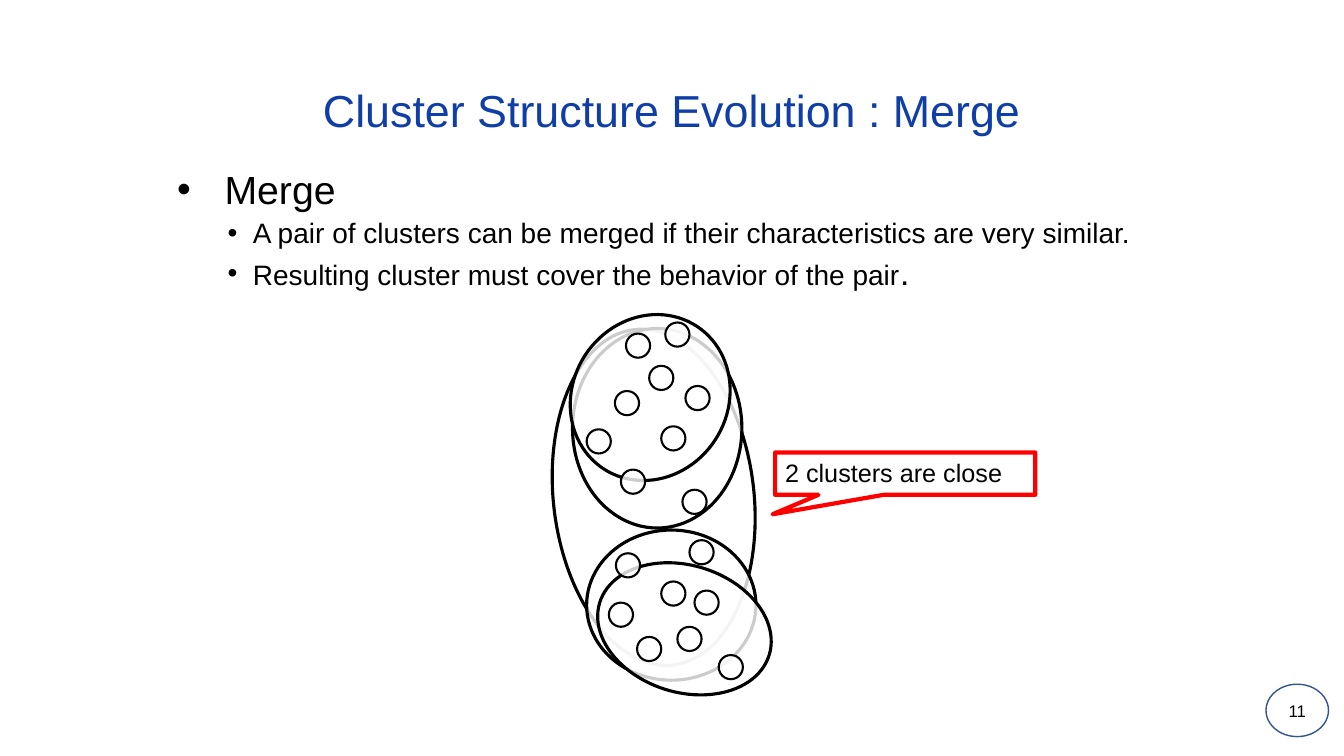
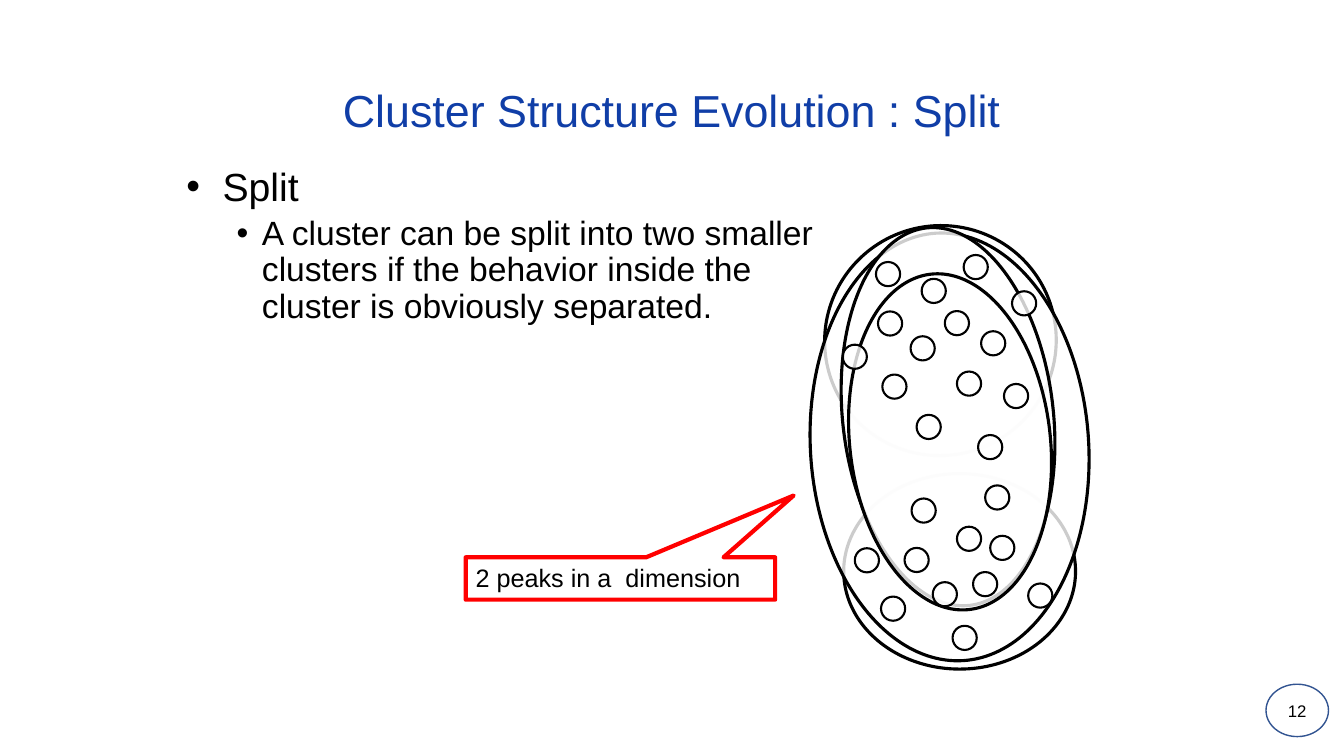
from dataclasses import dataclass
from typing import NamedTuple

from lxml.etree import SubElement
from pptx import Presentation
from pptx.dml.color import RGBColor
from pptx.enum.shapes import MSO_SHAPE as Preset
from pptx.enum.text import MSO_ANCHOR as Anchor, PP_ALIGN as Align
from pptx.oxml.ns import qn
from pptx.util import Inches, Pt

COLORS = {
    "title": "103EA7",
    "text": "000000",
    "paper": "FFFFFF",
    "outline": "000000",
    "callout": "FF0000",
    "badge": "325491",
}
FONT = "Arial"
SLIDE_WIDTH, SLIDE_HEIGHT = 13.33, 7.5
COLUMNS = 40
CELL = Inches(SLIDE_WIDTH) / COLUMNS
OPACITY = 80
POINT_SIZE = 0.72


class Box(NamedTuple):
    column: float
    row: float
    width: float
    height: float


class Run(NamedTuple):
    text: str
    size: float


class Cluster(NamedTuple):
    box: Box
    rotation: float = 0


class Callout(NamedTuple):
    text: str
    box: Box
    tip: tuple[float, float]


@dataclass
class Bullet:
    runs: list[Run]
    margin: float = 0.75
    hanging: float = 0.25
    space_before: float = 5


@dataclass
class EvolutionSlide:
    number: int
    name: str
    body: Box
    bullets: list[Bullet]
    clusters: list[Cluster]
    points: list[tuple[float, float]]
    callout: Callout


TITLE_BOX = Box(2.75, 1.2, 34.5, 4.35)
BADGE_BOX = Box(37.68, 20.37, 1.86, 1.56)
SPLIT_SHIFT = (8.8, -1.63)
SHARED_POINTS = [
    (18.12, 17.94), (19.68, 17.31), (19.32, 10.89), (20.16, 18.66),
    (18.63, 9.93), (18.3, 11.64), (18.96, 18.96), (17.46, 12.78),
    (20.67, 17.58), (20.4, 11.49), (19.68, 12.69), (18.48, 13.98),
    (20.31, 14.58), (18.33, 16.47), (20.52, 16.08),
]
SHIFTED_POINTS = [
    (column + SPLIT_SHIFT[0], row + SPLIT_SHIFT[1]) for column, row in SHARED_POINTS
]

SLIDES = [
    EvolutionSlide(
        number=11,
        name="Merge",
        body=Box(4.98, 4.92, 29.4, 4.53),
        bullets=[
            Bullet([Run("Merge", 28)], margin=0.47, hanging=0.47, space_before=0),
            Bullet([Run("A pair of clusters can be merged if their "
                        "characteristics are very similar.", 20)]),
            Bullet([Run("Resulting cluster must cover the behavior of the pair", 20),
                    Run(".", 24)]),
        ],
        clusters=[
            Cluster(Box(16.47, 9.78, 5.97, 10.05), 353.4),
            Cluster(Box(17.46, 15.78, 5.04, 4.47)),
            Cluster(Box(17.04, 9.78, 5.04, 5.94)),
            Cluster(Box(17.04, 9.3, 4.62, 5.07), 33.1),
            Cluster(Box(17.73, 16.83, 5.28, 3.78), 17.2),
        ],
        points=SHARED_POINTS + [(21.39, 19.5), (19.8, 9.6)],
        callout=Callout("2 clusters are close", Box(23.07, 13.47, 7.74, 1.26),
                        (-0.51, 0.96)),
    ),
    EvolutionSlide(
        number=12,
        name="Split",
        body=Box(5.25, 4.83, 19.83, 14.76),
        bullets=[
            Bullet([Run("Split", 28)], margin=0.36, hanging=0.36, space_before=0),
            Bullet([Run("A cluster can be split into two smaller clusters if the "
                        "behavior inside the cluster is obviously separated.", 24)]),
        ],
        clusters=[
            Cluster(Box(25.11, 14.1, 6.9, 5.82)),
            Cluster(Box(24.54, 6.72, 6.9, 6.84), 339.1),
            Cluster(Box(24.12, 6.93, 8.28, 12.75), 356.3),
            Cluster(Box(25.08, 6.75, 6.27, 11.31), 353.4),
            Cluster(Box(25.29, 8.13, 5.97, 10.05), 353.4),
        ],
        points=SHIFTED_POINTS + [
            (29.88, 11.43), (26.13, 9.27), (28.68, 7.59), (26.07, 7.8),
            (25.44, 16.32), (30.6, 17.37), (26.22, 17.76), (28.35, 18.63),
            (25.08, 10.26), (30.12, 8.67),
        ],
        callout=Callout("2 peaks in a  dimension", Box(13.86, 16.59, 9.21, 1.26),
                        (0.56, -1.96)),
    ),
]


def color(name: str) -> RGBColor:
    return RGBColor.from_string(COLORS[name])


def place(box: Box) -> list[int]:
    return [round(length * CELL) for length in box]


def write(paragraph, text: str, *, size: float, tint: str = "text",
          align: Align = Align.LEFT, spacing: float = 1.0) -> None:
    paragraph.alignment = align
    paragraph.line_spacing = spacing
    run = paragraph.add_run()
    run.text = text
    run.font.name = FONT
    run.font.size = Pt(size)
    run.font.color.rgb = color(tint)


def add_outlined(slide, preset: Preset, box: Box, *, line: str = "outline",
                 weight: float = 2.25, opacity: int = OPACITY):
    shape = slide.shapes.add_shape(preset, *place(box))
    shape.shadow.inherit = False
    shape.fill.solid()
    shape.fill.fore_color.rgb = color("paper")
    if opacity < 100:
        solid = shape.fill._xPr.find(qn("a:solidFill"))
        SubElement(solid[0], qn("a:alpha"), val=str(opacity * 1000))
    shape.line.color.rgb = color(line)
    shape.line.width = Pt(weight)
    return shape


def add_text_frame(slide, box: Box, anchor: Anchor = Anchor.TOP):
    frame = slide.shapes.add_textbox(*place(box)).text_frame
    frame.word_wrap = True
    frame.vertical_anchor = anchor
    return frame


def add_badge(slide, number: int) -> None:
    badge = add_outlined(slide, Preset.OVAL, BADGE_BOX, line="badge",
                         weight=1, opacity=100)
    frame = badge.text_frame
    frame.margin_left = frame.margin_right = 0
    frame.vertical_anchor = Anchor.MIDDLE
    write(frame.paragraphs[0], str(number), size=12, align=Align.CENTER)


def add_title(slide, name: str) -> None:
    frame = add_text_frame(slide, TITLE_BOX, Anchor.MIDDLE)
    write(frame.paragraphs[0], f"Cluster Structure Evolution : {name}", size=32,
          tint="title", align=Align.CENTER, spacing=0.9)


def add_bullets(slide, box: Box, bullets: list[Bullet]) -> None:
    frame = add_text_frame(slide, box)
    for index, bullet in enumerate(bullets):
        paragraph = frame.add_paragraph() if index else frame.paragraphs[0]
        properties = paragraph._p.get_or_add_pPr()
        properties.set("marL", str(Inches(bullet.margin)))
        properties.set("indent", str(-Inches(bullet.hanging)))
        SubElement(properties, qn("a:buFont"), typeface=FONT)
        SubElement(properties, qn("a:buChar"), char="•")
        paragraph.space_before = Pt(bullet.space_before)
        for run in bullet.runs:
            write(paragraph, run.text, size=run.size, spacing=0.9)


def add_callout(slide, callout: Callout) -> None:
    shape = add_outlined(slide, Preset.RECTANGULAR_CALLOUT, callout.box,
                         line="callout", weight=3)
    for index, offset in enumerate(callout.tip):
        shape.adjustments[index] = offset
    shape.text_frame.vertical_anchor = Anchor.TOP
    write(shape.text_frame.paragraphs[0], callout.text, size=18)


def draw(presentation, content: EvolutionSlide) -> None:
    slide = presentation.slides.add_slide(presentation.slide_layouts[6])
    add_badge(slide, content.number)
    add_title(slide, content.name)
    for cluster in content.clusters:
        add_outlined(slide, Preset.OVAL, cluster.box).rotation = cluster.rotation
    for column, row in content.points:
        add_outlined(slide, Preset.OVAL, Box(column, row, POINT_SIZE, POINT_SIZE),
                     weight=1.5)
    add_callout(slide, content.callout)
    add_bullets(slide, content.body, content.bullets)


def main() -> None:
    presentation = Presentation()
    presentation.slide_width = Inches(SLIDE_WIDTH)
    presentation.slide_height = Inches(SLIDE_HEIGHT)
    for content in SLIDES:
        draw(presentation, content)
    presentation.save("out.pptx")


if __name__ == "__main__":
    main()
